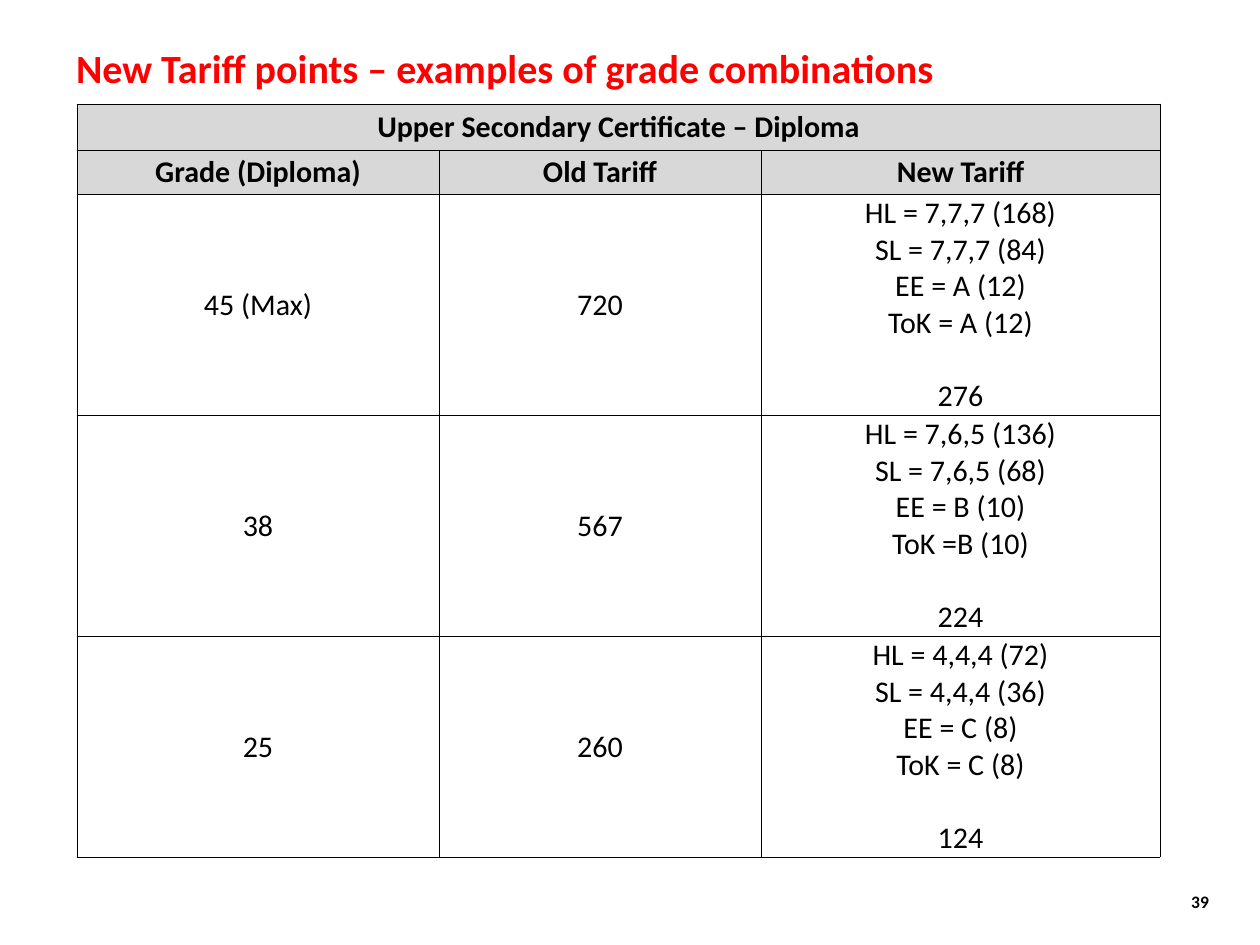
from dataclasses import dataclass

from lxml.etree import SubElement
from pptx import Presentation
from pptx.dml.color import RGBColor
from pptx.enum.text import MSO_ANCHOR, MSO_AUTO_SIZE, PP_ALIGN
from pptx.oxml.ns import qn
from pptx.util import Pt

EMU_PER_PX = 10160


@dataclass(frozen=True)
class Theme:
    font: str = "Calibri"
    title_color: str = "FF0000"
    ink: str = "000000"
    paper: str = "FFFFFF"
    header_fill: str = "D8D8D8"
    title_size: int = 32
    body_size: int = 24
    number_size: int = 14
    total_gap: float = 29.3
    rule: float = 0.5


THEME = Theme()

COLUMN_WIDTHS = [362, 322, 399]
HEADER_HEIGHTS = [46, 44]
GRADE_HEIGHT = 221

HEADINGS = ["Grade (Diploma)", "Old Tariff", "New Tariff"]
GRADES = [
    ("45 (Max)", "720",
     ["HL = 7,7,7 (168)", "SL = 7,7,7 (84)", "EE = A (12)", "ToK = A (12)"], "276"),
    ("38", "567",
     ["HL = 7,6,5 (136)", "SL = 7,6,5 (68)", "EE = B (10)", "ToK =B (10)"], "224"),
    ("25", "260",
     ["HL = 4,4,4 (72)", "SL = 4,4,4 (36)", "EE = C (8)", "ToK = C (8)"], "124"),
]


def px(length):
    return length * EMU_PER_PX


def place(shape, box):
    shape.left, shape.top, shape.width, shape.height = map(px, box)


def write(frame, lines, size=THEME.body_size, color=THEME.ink, bold=False,
          align=PP_ALIGN.CENTER, last_gap=0):
    for index, line in enumerate(lines):
        paragraph = frame.paragraphs[0] if index == 0 else frame.add_paragraph()
        paragraph.alignment = align
        paragraph.space_before = Pt(last_gap if 0 < index == len(lines) - 1 else 0)
        run = paragraph.add_run()
        run.text = line
        run.font.name = THEME.font
        run.font.size = Pt(size)
        run.font.bold = bold
        run.font.color.rgb = RGBColor.from_string(color)


def set_frame(frame, anchor):
    frame.word_wrap = True
    frame.auto_size = MSO_AUTO_SIZE.NONE
    frame.vertical_anchor = anchor
    frame.margin_left = frame.margin_right = px(13)
    frame.margin_top = frame.margin_bottom = px(6)


def format_cell(cell, fill):
    cell.vertical_anchor = MSO_ANCHOR.MIDDLE
    cell.margin_left = cell.margin_right = cell.margin_top = px(1)
    cell.margin_bottom = 0
    properties = cell._tc.get_or_add_tcPr()
    for edge in ("a:lnL", "a:lnR", "a:lnT", "a:lnB"):
        border = SubElement(properties, qn(edge), w=str(Pt(THEME.rule)))
        solid = SubElement(border, qn("a:solidFill"))
        SubElement(solid, qn("a:srgbClr"), val=THEME.ink)
    cell.fill.solid()
    cell.fill.fore_color.rgb = RGBColor.from_string(fill)


def add_title(slide, box):
    title = slide.shapes.title
    place(title, box)
    set_frame(title.text_frame, MSO_ANCHOR.TOP)
    write(title.text_frame, ["New Tariff points – examples of grade combinations"],
          size=THEME.title_size, color=THEME.title_color, bold=True,
          align=PP_ALIGN.LEFT)


def add_tariff_table(slide, box):
    heights = HEADER_HEIGHTS + [GRADE_HEIGHT] * len(GRADES)
    frame = slide.shapes.add_table(len(heights), len(COLUMN_WIDTHS), *map(px, box))
    tariff = frame.table
    tariff.first_row = tariff.horz_banding = False
    for column, width in zip(tariff.columns, COLUMN_WIDTHS):
        column.width = px(width)
    for index, (row, height) in enumerate(zip(tariff.rows, heights)):
        row.height = px(height)
        fill = THEME.header_fill if index < len(HEADER_HEIGHTS) else THEME.paper
        for cell in row.cells:
            format_cell(cell, fill)

    diploma = tariff.cell(0, 0)
    diploma.merge(tariff.cell(0, len(COLUMN_WIDTHS) - 1))
    write(diploma.text_frame, ["Upper Secondary Certificate – Diploma"], bold=True)
    for column, heading in enumerate(HEADINGS):
        write(tariff.cell(1, column).text_frame, [heading], bold=True)
    for row, (grade, old, parts, total) in enumerate(GRADES, len(HEADER_HEIGHTS)):
        for column, lines in enumerate([[grade], [old], [*parts, total]]):
            write(tariff.cell(row, column).text_frame, lines,
                  last_gap=THEME.total_gap)


def add_page_number(slide, box):
    number = slide.shapes.add_textbox(*map(px, box))
    set_frame(number.text_frame, MSO_ANCHOR.MIDDLE)
    write(number.text_frame, ["39"], size=THEME.number_size, bold=True,
          align=PP_ALIGN.RIGHT)


def main():
    deck = Presentation()
    deck.slide_width, deck.slide_height = px(1260), px(945)
    slide = deck.slides.add_slide(deck.slide_layouts[5])
    add_title(slide, (63, 38, 1134, 157))
    add_page_number(slide, (1146, 876, 76, 50))
    add_tariff_table(slide, (77, 104, 1083, 753))
    deck.save("out.pptx")


if __name__ == "__main__":
    main()
